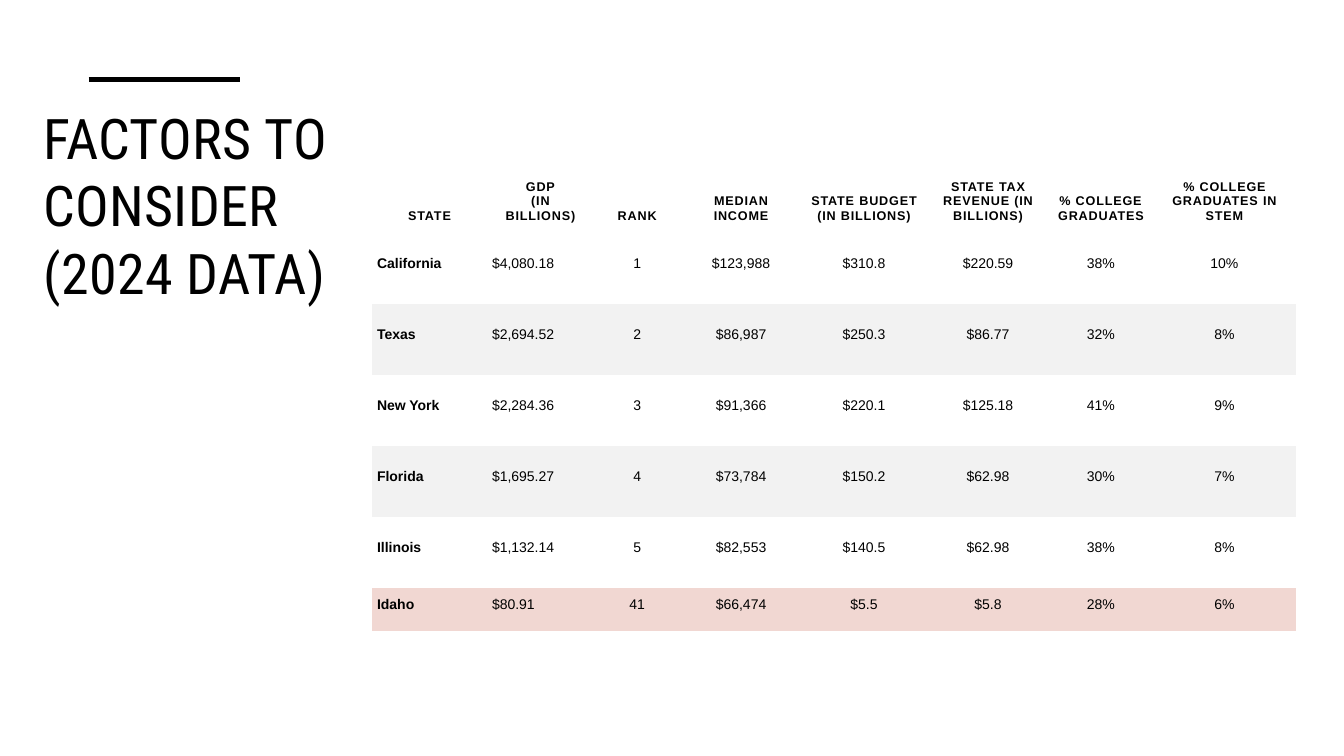
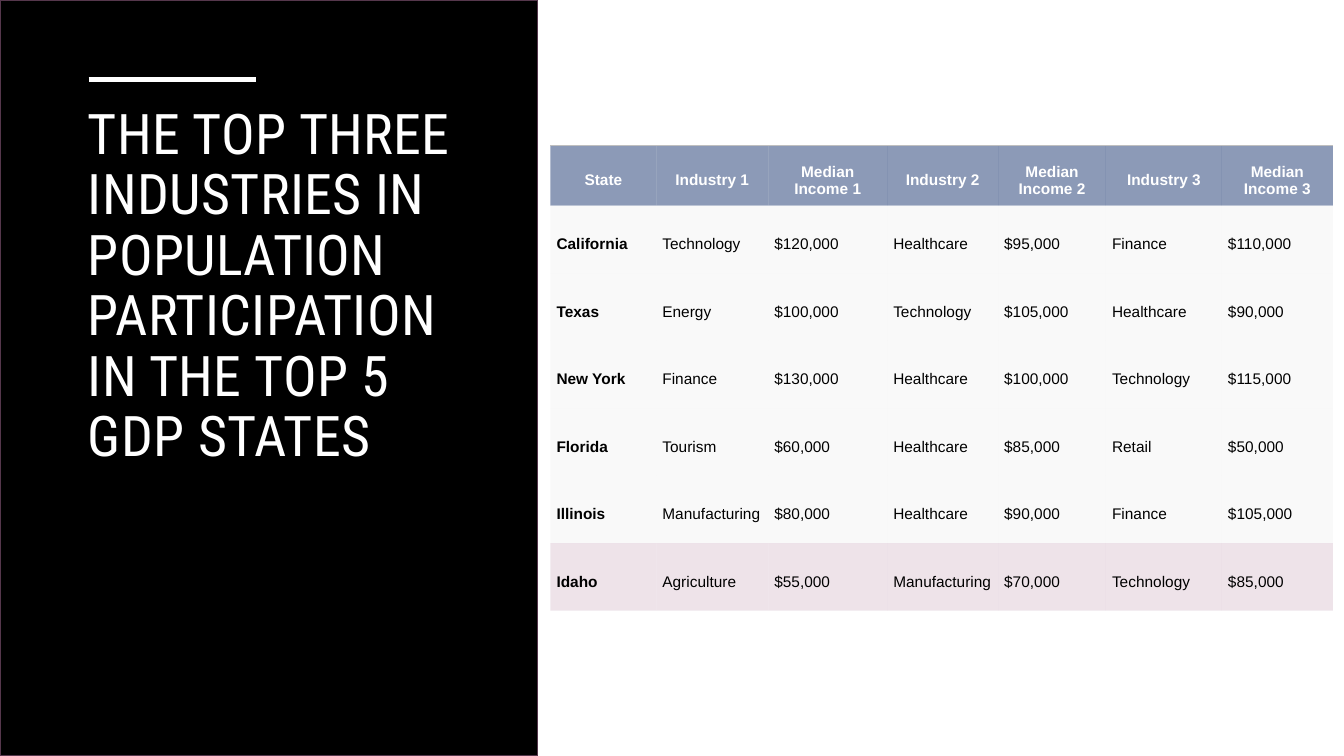
from lxml import etree
from pptx import Presentation
from pptx import util as u
from pptx.dml.color import RGBColor
from pptx.enum import shapes, text
from pptx.oxml.ns import qn

PX = 9144  # EMU per px, 100 px to the inch
COLORS = {
    "black": "000000", "white": "FFFFFF", "panel_edge": "55374C",
    "band": "F2F2F2", "rose": "F1D7D2", "navy": "002060",
    "mauve": "DAC2D0", "rule": "BFBFBF",
}
TITLE_FONT, BODY_FONT = "Roboto Condensed", "Arial"
NO_STYLE = "{2D5ABB26-0587-4C30-8999-92F81FD0307C}"
LEFT, CENTER = text.PP_ALIGN.LEFT, text.PP_ALIGN.CENTER
MIDDLE, BOTTOM = text.MSO_ANCHOR.MIDDLE, text.MSO_ANCHOR.BOTTOM


def px(*values):
    return [u.Emu(v * PX) for v in values]


def rgb(name):
    return RGBColor.from_string(COLORS[name])


class Deck:
    def __init__(self):
        self.prs = Presentation()
        self.prs.slide_width, self.prs.slide_height = px(1333, 750)
        self.s = None

    def slide(self):
        self.s = self.prs.slides.add_slide(self.prs.slide_layouts[5])

    def font(self, p, face, size, color, bold=False, spacing=0):
        for r in p.runs:
            r.font.name, r.font.size, r.font.bold = face, u.Pt(size), bold
            r.font.color.rgb = rgb(color)
            if spacing:
                r.font._element.set("spc", str(spacing))

    def title(self, words, box, color, line_spacing=1.0):
        sp = self.s.shapes.title
        self.s.shapes.element.append(sp.element)  # bring to front
        sp.left, sp.top, sp.width, sp.height = px(*box)
        tf = sp.text_frame
        tf.text = words
        tf.word_wrap, tf.auto_size = True, text.MSO_AUTO_SIZE.NONE
        tf.vertical_anchor = text.MSO_ANCHOR.TOP
        p = tf.paragraphs[0]
        p.alignment, p.line_spacing = LEFT, line_spacing
        self.font(p, TITLE_FONT, 40, color, spacing=30)

    def panel(self, box, fill, edge):
        sp = self.s.shapes.add_shape(shapes.MSO_SHAPE.RECTANGLE, *px(*box))
        sp.shadow.inherit = False
        sp.fill.solid()
        sp.fill.fore_color.rgb = rgb(fill)
        sp.line.color.rgb = rgb(edge)
        sp.line.width = u.Pt(1)

    def accent(self, x1, x2, y, color):
        line = self.s.shapes.add_connector(
            shapes.MSO_CONNECTOR.STRAIGHT, *px(x1, y, x2, y))
        line.line.color.rgb = rgb(color)
        line.line.width = u.Pt(3.5)
        etree.SubElement(line.element.spPr, qn("a:effectLst"))

    def table(self, left, top, cols, heights, rows, style):
        """Draw rows of text; style(row, col) gives the look of a cell."""
        frame = self.s.shapes.add_table(
            len(rows), len(cols), *px(left, top, sum(cols), sum(heights)))
        table = frame.table
        table.horz_banding = False
        table._tbl.tblPr.find(qn("a:tableStyleId")).text = NO_STYLE
        for col, width in zip(table.columns, px(*cols)):
            col.width = width
        for row, height in zip(table.rows, px(*heights)):
            row.height = height
        for i, row in enumerate(rows):
            for j, words in enumerate(row):
                self.cell(table.cell(i, j), words, **style(i, j))

    def cell(self, cell, words, insets, size, color="black", bold=False,
             spacing=0, align=LEFT, anchor=MIDDLE, fill=None, alpha=100,
             top_rule=None):
        (cell.margin_left, cell.margin_top,
         cell.margin_right, cell.margin_bottom) = px(*insets)
        cell.vertical_anchor = anchor
        cell.text_frame.text = words
        for p in cell.text_frame.paragraphs:
            p.alignment = align
            self.font(p, BODY_FONT, size, color, bold, spacing)
        tcPr = cell._tc.get_or_add_tcPr()
        if fill:
            cell.fill.solid()
            cell.fill.fore_color.rgb = rgb(fill)
            if alpha < 100:
                clr = tcPr.find(".//" + qn("a:srgbClr"))
                etree.SubElement(clr, qn("a:alpha"), val=str(alpha * 1000))
        else:
            cell.fill.background()
        if top_rule:
            ln = etree.Element(qn("a:lnT"), w=str(u.Pt(1)))
            solid = etree.SubElement(ln, qn("a:solidFill"))
            etree.SubElement(solid, qn("a:srgbClr"), val=COLORS[top_rule])
            tcPr.insert(0, ln)


FACTORS = [
    ["STATE", "GDP\n(IN\nBILLIONS)", "RANK", "MEDIAN\nINCOME",
     "STATE BUDGET\n(IN BILLIONS)", "STATE TAX\nREVENUE (IN\nBILLIONS)",
     "% COLLEGE GRADUATES", "% COLLEGE\nGRADUATES IN\nSTEM"],
    ["California", "$4,080.18", "1", "$123,988", "$310.8", "$220.59", "38%", "10%"],
    ["Texas", "$2,694.52", "2", "$86,987", "$250.3", "$86.77", "32%", "8%"],
    ["New York", "$2,284.36", "3", "$91,366", "$220.1", "$125.18", "41%", "9%"],
    ["Florida", "$1,695.27", "4", "$73,784", "$150.2", "$62.98", "30%", "7%"],
    ["Illinois", "$1,132.14", "5", "$82,553", "$140.5", "$62.98", "38%", "8%"],
    ["Idaho", "$80.91", "41", "$66,474", "$5.5", "$5.8", "28%", "6%"],
]
INDUSTRIES = [
    ["State", "Industry 1", "Median\nIncome 1", "Industry 2",
     "Median\nIncome 2", "Industry 3", "Median\nIncome 3"],
    ["California", "Technology", "$120,000", "Healthcare", "$95,000", "Finance", "$110,000"],
    ["Texas", "Energy", "$100,000", "Technology", "$105,000", "Healthcare", "$90,000"],
    ["New York", "Finance", "$130,000", "Healthcare", "$100,000", "Technology", "$115,000"],
    ["Florida", "Tourism", "$60,000", "Healthcare", "$85,000", "Retail", "$50,000"],
    ["Illinois", "Manufacturing", "$80,000", "Healthcare", "$90,000", "Finance", "$105,000"],
    ["Idaho", "Agriculture", "$55,000", "Manufacturing", "$70,000", "Technology", "$85,000"],
]


def factor_style(row, col):
    if row == 0:
        return dict(insets=(5, 10, 5, 10), size=9, bold=True, spacing=60,
                    align=CENTER, anchor=BOTTOM)
    last = row == len(FACTORS) - 1
    fill = "rose" if last else "band" if row % 2 == 0 else None
    return dict(insets=(5, 1, 5, 10), size=10, bold=col == 0,
                align=LEFT if col < 2 else CENTER, fill=fill)


def industry_style(row, col):
    base = dict(insets=(6, 11, 6, 1), size=11, alpha=45)
    if row == 0:
        return dict(base, color="white", bold=True, align=CENTER,
                    fill="navy", top_rule="rule")
    last = row == len(INDUSTRIES) - 1
    return dict(base, bold=col == 0, fill="mauve" if last else "band")


def main():
    d = Deck()

    # Factors by state
    d.slide()
    d.title("FACTORS TO CONSIDER (2024 DATA)", (33, 98, 312, 368), "black")
    d.accent(88, 238, 79, "black")
    d.table(369, 124, [114, 106, 86, 120, 124, 122, 102, 143],
            [107] + [70.5] * 5 + [43], FACTORS, factor_style)

    # Top industries by state
    d.slide()
    d.panel((0, 0, 533, 750), "black", "panel_edge")
    d.accent(88, 254, 79, "white")
    d.title("THE TOP THREE INDUSTRIES IN POPULATION PARTICIPATION "
            "IN THE TOP 5 GDP STATES", (77, 100, 407, 401), "white", 0.9)
    d.table(546, 144, [105, 111, 118, 110, 107, 115, 110],
            [60] + [67] * 6, INDUSTRIES, industry_style)

    d.prs.save("out.pptx")


if __name__ == "__main__":
    main()
